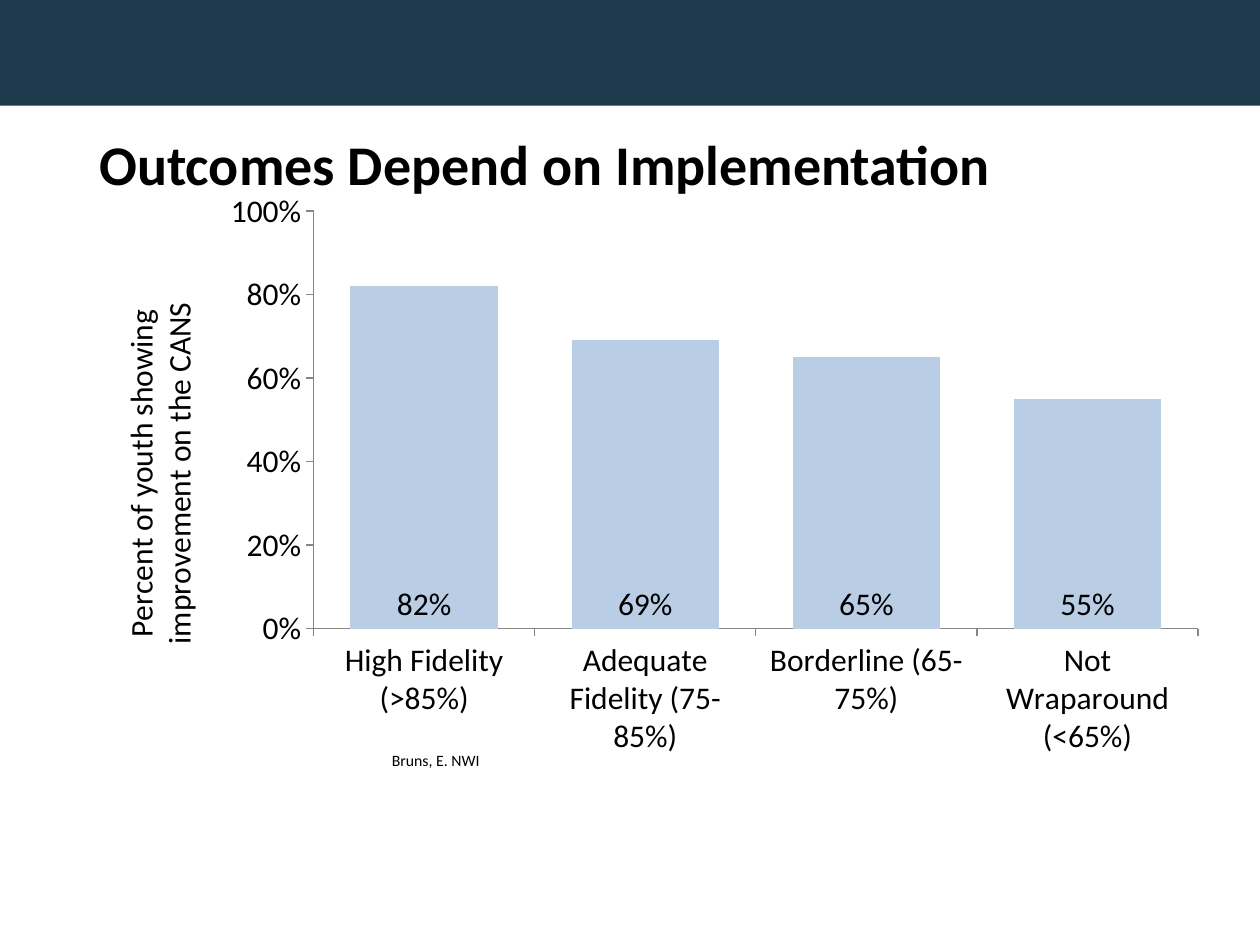
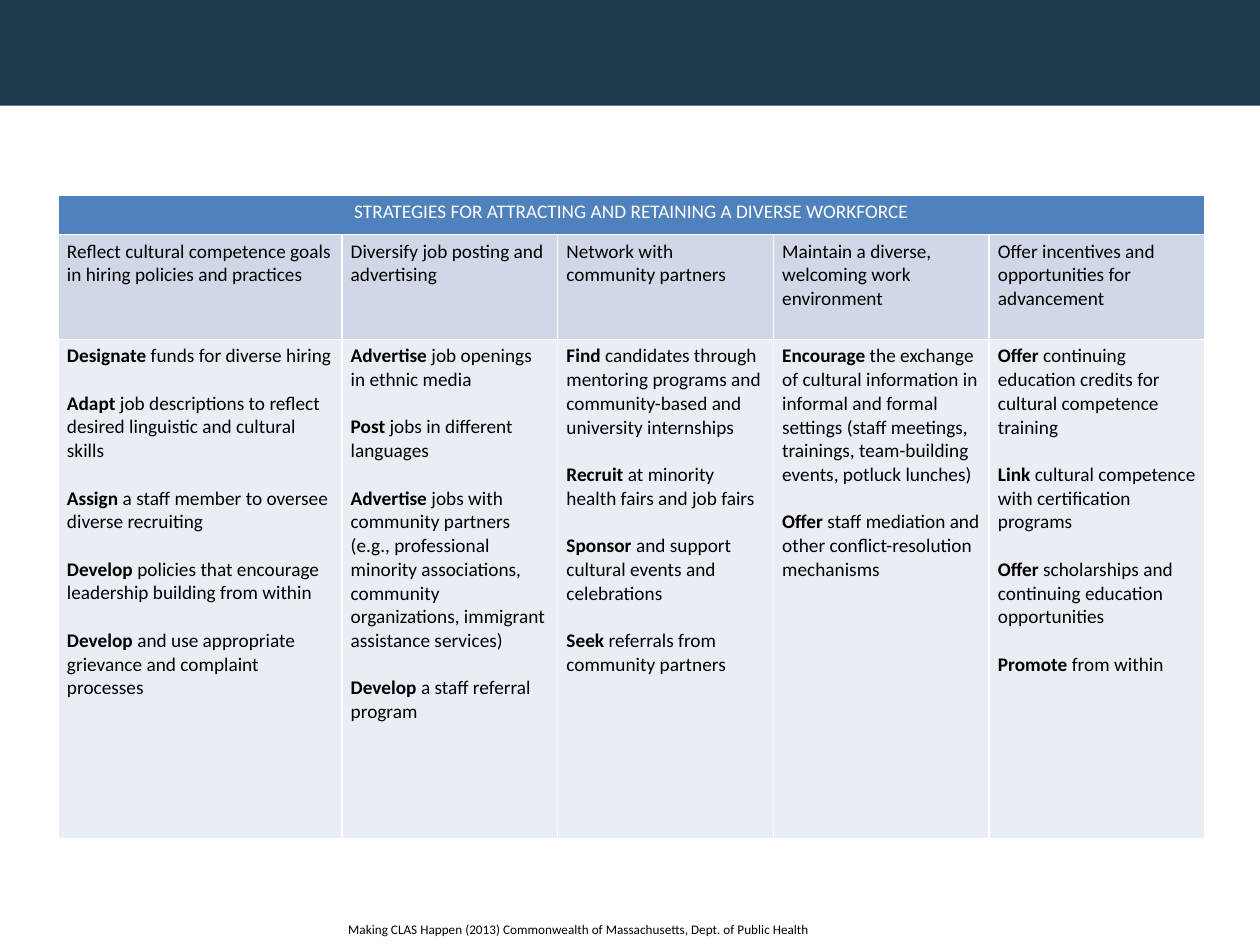
"""Build two slides on wraparound outcomes and workforce strategies."""
from dataclasses import dataclass

from lxml.etree import SubElement
from pptx import Presentation
from pptx.chart.data import CategoryChartData
from pptx.dml.color import RGBColor
from pptx.enum.chart import XL_CHART_TYPE as ChartType, XL_LABEL_POSITION as LabelPosition
from pptx.enum.chart import XL_TICK_MARK as TickMark
from pptx.enum.shapes import MSO_SHAPE as ShapeType
from pptx.enum.text import MSO_ANCHOR as Anchor, PP_ALIGN as Align
from pptx.oxml import parse_xml
from pptx.oxml.ns import nsdecls, qn
from pptx.util import Cm, Pt

FONT = "Calibri"
COLOURS = {
    "band": "1E384C",
    "text": "000000",
    "white": "FFFFFF",
    "bar": "B9CDE5",
    "axis": "868686",
    "table_title": "4F81BD",
    "strategy": "D0D8E8",
    "actions": "E9EDF4",
}
SLIDE_WIDTH, SLIDE_HEIGHT = 25.4, 19.05
TABLE_TEXT_SIZE = 11
ACTION_GAP = 13.5


@dataclass(frozen=True)
class Caption:
    text: str
    left: float
    top: float
    width: float
    height: float
    size: float
    bold: bool = False
    wrap: bool = True
    align: Align = Align.LEFT
    anchor: Anchor = Anchor.TOP


@dataclass(frozen=True)
class Strategy:
    heading: str
    width: float
    actions: tuple[tuple[str, str], ...]


TITLE = Caption("Outcomes Depend on Implementation", 1.75, 2.39, 21.89, 1.78, 32,
                bold=True, anchor=Anchor.MIDDLE)
CHART_SOURCE = Caption("Bruns, E. NWI", 7.65, 15.01, 2.29, 1.02, 9, wrap=False)
TABLE_SOURCE = Caption(
    "Making CLAS Happen (2013) Commonwealth of Massachusetts, Dept. of Public Health",
    4.8, 18.44, 13.72, 0.58, 7.5, align=Align.CENTER)

OUTCOMES = {
    "High Fidelity (>85%)": 0.82,
    "Adequate Fidelity (75-85%)": 0.69,
    "Borderline (65-75%)": 0.65,
    "Not Wraparound (<65%)": 0.55,
}

TABLE_TITLE = "STRATEGIES FOR ATTRACTING AND RETAINING A DIVERSE WORKFORCE"
ROW_HEIGHTS = (0.79, 2.11, 10.06)
STRATEGIES = (
    Strategy("Reflect cultural competence goals in hiring policies and practices", 5.72, (
        ("Designate", "funds for diverse hiring"),
        ("Adapt", "job descriptions to reflect desired linguistic and cultural skills"),
        ("Assign", "a staff member to oversee diverse recruiting"),
        ("Develop", "policies that encourage leadership building from within"),
        ("Develop", "and use appropriate grievance and complaint processes"),
    )),
    Strategy("Diversify job posting and advertising", 4.35, (
        ("Advertise", "job openings in ethnic media"),
        ("Post", "jobs in different languages"),
        ("Advertise", "jobs with community partners (e.g., professional minority "
                      "associations, community organizations, immigrant assistance services)"),
        ("Develop", "a staff referral program"),
    )),
    Strategy("Network with community partners", 4.35, (
        ("Find", "candidates through mentoring programs and community-based and "
                 "university internships"),
        ("Recruit", "at minority health fairs and job fairs"),
        ("Sponsor", "and support cultural events and celebrations"),
        ("Seek", "referrals from community partners"),
    )),
    Strategy("Maintain a diverse, welcoming work environment", 4.35, (
        ("Encourage", "the exchange of cultural information in informal and formal settings "
                      "(staff meetings, trainings, team-building events, potluck lunches)"),
        ("Offer", "staff mediation and other conflict-resolution mechanisms"),
    )),
    Strategy("Offer incentives and opportunities for advancement", 4.35, (
        ("Offer", "continuing education credits for cultural competence training"),
        ("Link", "cultural competence with certification programs"),
        ("Offer", "scholarships and continuing education opportunities"),
        ("Promote", "from within"),
    )),
)


def colour(name: str) -> RGBColor:
    """Look up a palette colour."""
    return RGBColor.from_string(COLOURS[name])


def style_font(font, size: float, bold: bool = False, name: str = "text") -> None:
    """Apply the shared typeface with a size, weight and colour."""
    font.name, font.size, font.bold = FONT, Pt(size), bold
    font.color.rgb = colour(name)


def add_banded_slide(presentation):
    """Add a blank slide with the dark band across its top."""
    slide = presentation.slides.add_slide(presentation.slide_layouts[6])
    band = slide.shapes.add_shape(ShapeType.RECTANGLE, 0, 0, Cm(SLIDE_WIDTH), Cm(2.13))
    band.shadow.inherit = False
    band.fill.solid()
    band.fill.fore_color.rgb = colour("band")
    band.line.fill.background()
    return slide


def add_caption(slide, caption: Caption) -> None:
    """Draw one text box."""
    box = slide.shapes.add_textbox(Cm(caption.left), Cm(caption.top),
                                   Cm(caption.width), Cm(caption.height))
    frame = box.text_frame
    frame.text = caption.text
    frame.word_wrap = caption.wrap
    frame.vertical_anchor = caption.anchor
    paragraph = frame.paragraphs[0]
    paragraph.alignment = caption.align
    style_font(paragraph.runs[0].font, caption.size, caption.bold)


def fix_plot_area(chart, left: float, top: float, width: float, height: float) -> None:
    """Place the inner plot area by fractions of the chart."""
    plot_area = chart._chartSpace.chart.plotArea
    for layout in plot_area.findall(qn("c:layout")):
        plot_area.remove(layout)
    plot_area.insert(0, parse_xml(
        f'<c:layout {nsdecls("c")}><c:manualLayout><c:layoutTarget val="inner"/>'
        '<c:xMode val="edge"/><c:yMode val="edge"/>'
        f'<c:x val="{left}"/><c:y val="{top}"/><c:w val="{width}"/><c:h val="{height}"/>'
        '</c:manualLayout></c:layout>'))


def add_outcome_chart(slide) -> None:
    """Draw the column chart of improvement by fidelity level."""
    chart_data = CategoryChartData(number_format="0%")
    chart_data.categories = list(OUTCOMES)
    chart_data.add_series("Series 1", list(OUTCOMES.values()))
    chart = slide.shapes.add_chart(ChartType.COLUMN_CLUSTERED, Cm(1.75), Cm(3.66),
                                   Cm(22.86), Cm(11.86), chart_data).chart
    chart.has_legend = chart.has_title = False
    style_font(chart.font, 18)
    fix_plot_area(chart, 0.2, 0.05, 0.78, 0.71)

    plot = chart.plots[0]
    plot.gap_width = 50
    plot.vary_by_categories = False
    series_fill = plot.series[0].format.fill
    series_fill.solid()
    series_fill.fore_color.rgb = colour("bar")
    plot.has_data_labels = True
    labels = plot.data_labels
    labels.show_value = True
    labels.position = LabelPosition.INSIDE_BASE
    labels.number_format, labels.number_format_is_linked = "0%", False
    style_font(labels.font, 18)

    value_axis = chart.value_axis
    value_axis.minimum_scale, value_axis.maximum_scale, value_axis.major_unit = 0, 1, 0.2
    value_axis.tick_labels.number_format = "0%"
    value_axis.tick_labels.number_format_is_linked = False
    title_frame = value_axis.axis_title.text_frame
    title_frame.text = "Percent of youth showing improvement on the CANS"
    style_font(title_frame.paragraphs[0].runs[0].font, 18)
    for axis in (value_axis, chart.category_axis):
        axis.has_major_gridlines = False
        axis.major_tick_mark = TickMark.OUTSIDE
        axis.format.line.color.rgb = colour("axis")
        axis.format.line.width = Pt(0.75)


def prepare_cell(cell, fill_name: str) -> None:
    """Give a table cell its margins, white borders and fill."""
    cell.margin_left = cell.margin_right = Cm(0.18)
    cell.margin_top = cell.margin_bottom = Cm(0.1)
    properties = cell._tc.get_or_add_tcPr()
    for side in ("a:lnL", "a:lnR", "a:lnT", "a:lnB"):
        line = SubElement(properties, qn(side), w=str(Pt(1)))
        solid = SubElement(line, qn("a:solidFill"))
        SubElement(solid, qn("a:srgbClr"), val=COLOURS["white"])
    cell.fill.solid()
    cell.fill.fore_color.rgb = colour(fill_name)


def write_cell(cell, text: str, colour_name: str = "text") -> None:
    """Write one plain paragraph in a cell."""
    cell.text_frame.text = text
    style_font(cell.text_frame.paragraphs[0].runs[0].font, TABLE_TEXT_SIZE, name=colour_name)


def write_actions(cell, actions: tuple[tuple[str, str], ...]) -> None:
    """Write spaced paragraphs, each led by a bold verb."""
    frame = cell.text_frame
    for index, (verb, rest) in enumerate(actions):
        paragraph = frame.add_paragraph() if index else frame.paragraphs[0]
        paragraph.space_before = Pt(ACTION_GAP if index else 0)
        paragraph.text = verb
        paragraph.add_run().text = f" {rest}"
        for run, bold in zip(paragraph.runs, (True, False)):
            style_font(run.font, TABLE_TEXT_SIZE, bold)


def add_strategy_table(slide) -> None:
    """Draw the table of workforce strategies."""
    width = sum(strategy.width for strategy in STRATEGIES)
    table = slide.shapes.add_table(len(ROW_HEIGHTS), len(STRATEGIES), Cm(1.17), Cm(3.94),
                                   Cm(width), Cm(sum(ROW_HEIGHTS))).table
    for row, height in zip(table.rows, ROW_HEIGHTS):
        row.height = Cm(height)
    for index, strategy in enumerate(STRATEGIES):
        table.columns[index].width = Cm(strategy.width)
        for row_index, fill_name in enumerate(("table_title", "strategy", "actions")):
            prepare_cell(table.cell(row_index, index), fill_name)
        write_cell(table.cell(1, index), strategy.heading)
        write_actions(table.cell(2, index), strategy.actions)
    title_cell = table.cell(0, 0)
    title_cell.merge(table.cell(0, len(STRATEGIES) - 1))
    write_cell(title_cell, TABLE_TITLE, "white")
    title_cell.text_frame.paragraphs[0].alignment = Align.CENTER


def main() -> None:
    """Build and save the presentation."""
    presentation = Presentation()
    presentation.slide_width, presentation.slide_height = Cm(SLIDE_WIDTH), Cm(SLIDE_HEIGHT)

    outcome_slide = add_banded_slide(presentation)
    add_caption(outcome_slide, TITLE)
    add_caption(outcome_slide, CHART_SOURCE)
    add_outcome_chart(outcome_slide)

    strategy_slide = add_banded_slide(presentation)
    add_strategy_table(strategy_slide)
    add_caption(strategy_slide, TABLE_SOURCE)

    presentation.save("out.pptx")


if __name__ == "__main__":
    main()
